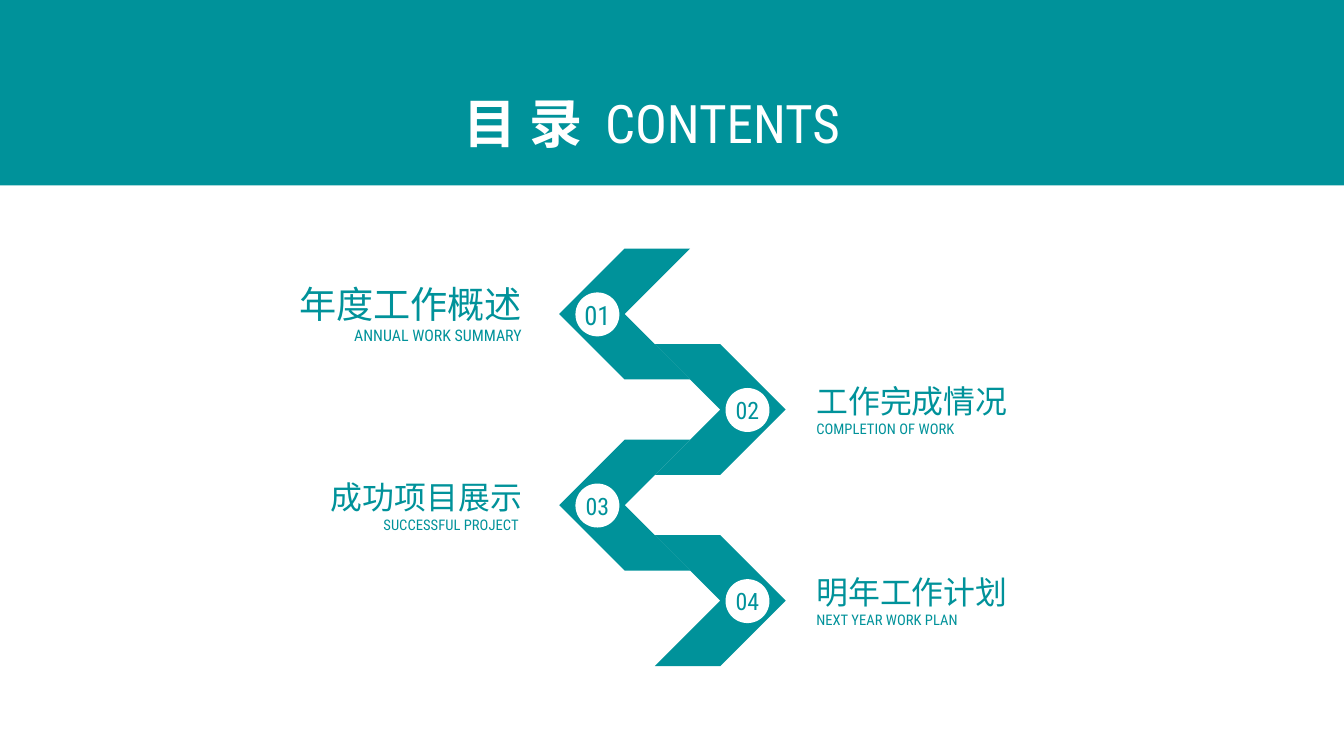
"""Builds a contents slide with four zigzag chevrons."""
from pptx import Presentation
from pptx.dml.color import RGBColor
from pptx.enum.shapes import MSO_SHAPE as Kind
from pptx.enum.text import MSO_ANCHOR as Anchor, MSO_AUTO_SIZE as Fit, PP_ALIGN as Align
from pptx.util import Inches, Pt

TEAL, WHITE = "00929A", "FFFFFF"


def draw(kind, left, top, wide, high, fill):
    shape = slide.shapes.add_shape(kind, Inches(left), Inches(top), Inches(wide), Inches(high))
    shape.shadow.inherit = False
    shape.fill.solid()
    shape.fill.fore_color.rgb = RGBColor.from_string(fill)
    shape.line.fill.background()
    return shape


def write(shape, *lines, color=TEAL, align=Align.LEFT, bold=False, fit=Fit.SHAPE_TO_FIT_TEXT):
    frame = shape.text_frame
    frame.word_wrap = True
    frame.auto_size = fit
    frame.vertical_anchor = Anchor.MIDDLE
    frame.margin_left = frame.margin_right = frame.margin_top = frame.margin_bottom = 0
    for i, (text, size) in enumerate(lines):
        para = frame.add_paragraph() if i else frame.paragraphs[0]
        para.alignment = align
        run = para.add_run()
        run.text = text
        run.font.name = "Roboto Condensed"
        run.font.size = Pt(size)
        run.font.bold = bold
        run.font.color.rgb = RGBColor.from_string(color)


deck = Presentation()
deck.slide_width, deck.slide_height = Inches(14.06), Inches(7.91)
slide = deck.slides.add_slide(deck.slide_layouts[5])

band = draw(Kind.RECTANGLE, 0, 0, 14.06, 1.94, TEAL)
title = slide.shapes.title
title.element.addprevious(band.element)
title.left, title.top, title.width, title.height = map(Inches, (4.78, 0.94, 1.31, 0.67))
write(title, ("目 录", 40), color=WHITE, align=Align.RIGHT, bold=True)
label = slide.shapes.add_textbox(Inches(6.33), Inches(0.94), Inches(3.24), Inches(0.67))
write(label, ("CONTENTS", 40), color=WHITE)

items = [
    ("年度工作概述", 28, "ANNUAL WORK SUMMARY", 12, 20, 2.94, 0.67),
    ("工作完成情况", 24, "COMPLETION OF WORK", 11, 18, 3.99, 0.59),
    ("成功项目展示", 24, "SUCCESSFUL PROJECT ", 11, 18, 4.99, 0.59),
    ("明年工作计划", 24, "NEXT YEAR WORK PLAN", 11, 18, 5.99, 0.59),
]
for i in (1, 3, 0, 2):
    name, big, sub, small, size, top, high = items[i]
    right = i % 2 == 1
    arrow = draw(Kind.CHEVRON, 6.85 if right else 5.85, 2.6 + i, 1.37, 1.37, TEAL)
    arrow.rotation = 0 if right else 180
    dot = draw(Kind.OVAL, 7.59 if right else 6.02, 3.06 + i, 0.46, 0.46, WHITE)
    write(dot, (f"{i + 1:02}", size), align=Align.CENTER, fit=Fit.NONE)
    left, wide = (8.54, 2.36) if right else (2.63, 2.83)
    label = slide.shapes.add_textbox(Inches(left), Inches(top), Inches(wide), Inches(high))
    write(label, (name, big), (sub, small), align=Align.LEFT if right else Align.RIGHT)

deck.save("out.pptx")
